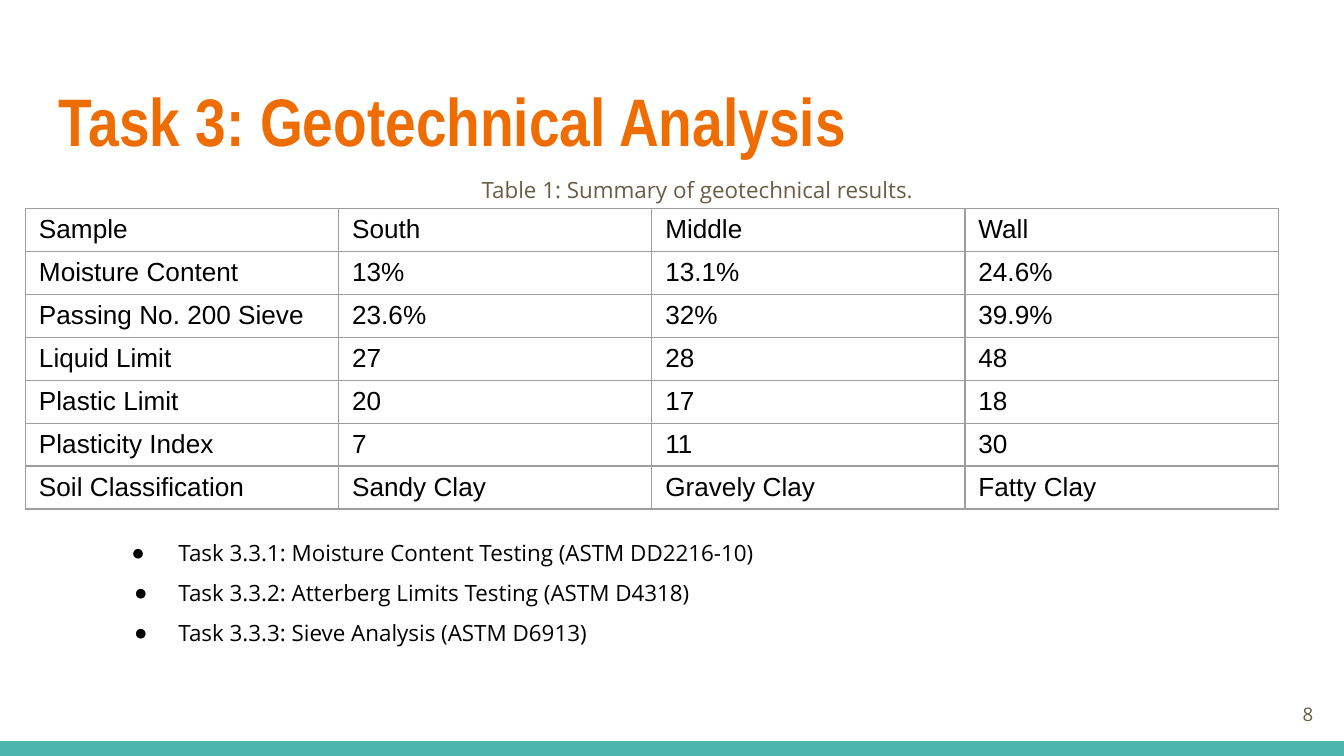
import pptx
import pptx.util
import pptx.dml.color
import pptx.enum.shapes
import pptx.enum.text
import pptx.oxml
import pptx.oxml.ns

Inches = pptx.util.Inches
Pt = pptx.util.Pt
RGBColor = pptx.dml.color.RGBColor
ALIGN = pptx.enum.text.PP_ALIGN
ANCHOR = pptx.enum.text.MSO_ANCHOR

WHITE = RGBColor(0xFF, 0xFF, 0xFF)
BLACK = RGBColor(0x00, 0x00, 0x00)
ORANGE = RGBColor(0xEF, 0x6C, 0x00)
BROWN = RGBColor(0x69, 0x5D, 0x46)
TEAL = RGBColor(0x4D, 0xB6, 0xAC)
GREY = RGBColor(0x9E, 0x9E, 0x9E)

TITLE = {"name": "Arial Narrow", "size": Pt(36), "bold": True, "color": ORANGE}
CAPTION = {"name": "Open Sans", "size": Pt(12), "color": BROWN}
TASK = {"name": "Open Sans", "size": Pt(12), "color": BLACK}
NUMBER = {"name": "Open Sans", "size": Pt(10), "color": BROWN}
CELL = {"name": "Arial", "size": Pt(14), "color": BLACK}
CELL_LAYOUT = {
    "margin_left": Inches(0.1),
    "margin_right": Inches(0.1),
    "margin_top": Inches(0.04),
    "margin_bottom": Inches(0.04),
    "vertical_anchor": ANCHOR.MIDDLE,
}

RESULTS = [
    ("Sample", "South", "Middle", "Wall"),
    ("Moisture Content", "13%", "13.1%", "24.6%"),
    ("Passing No. 200 Sieve", "23.6%", "32%", "39.9%"),
    ("Liquid Limit", "27", "28", "48"),
    ("Plastic Limit", "20", "17", "18"),
    ("Plasticity Index", "7", "11", "30"),
    ("Soil Classification", "Sandy Clay", "Gravely Clay", "Fatty Clay"),
]
TASKS = [
    ("Task 3.3.1: Moisture Content Testing (ASTM DD2216-10)", 0.35),
    ("Task 3.3.2: Atterberg Limits Testing (ASTM D4318)", 0.33),
    ("Task 3.3.3: Sieve Analysis (ASTM D6913)", 0.33),
]


def write(para, text, style):
    span = para.add_run()
    span.text = text
    for key, value in style.items():
        if key == "color":
            span.font.color.rgb = value
        else:
            setattr(span.font, key, value)


def add_frame(page, box, anchor=ANCHOR.TOP):
    frame = page.shapes.add_textbox(*map(Inches, box)).text_frame
    frame.word_wrap = True
    frame.vertical_anchor = anchor
    for side in ("left", "right", "top", "bottom"):
        setattr(frame, f"margin_{side}", Inches(0.1))
    return frame


def add_line(page, box, text, style, align=ALIGN.LEFT, spacing=1.0, anchor=ANCHOR.TOP):
    para = add_frame(page, box, anchor).paragraphs[0]
    para.alignment = align
    para.line_spacing = spacing
    write(para, text, style)


def add_footer_bar(page, box):
    bar = page.shapes.add_shape(pptx.enum.shapes.MSO_SHAPE.RECTANGLE, *map(Inches, box))
    bar.shadow.inherit = False
    bar.fill.solid()
    bar.fill.fore_color.rgb = TEAL
    bar.line.fill.background()


def add_bullet(para, hanging):
    properties = para._p.get_or_add_pPr()
    properties.set("marL", str(Inches(0.5)))
    properties.set("indent", str(-Inches(hanging)))
    namespace = pptx.oxml.ns.nsdecls("a")
    for markup in (
        f'<a:buClr {namespace}><a:srgbClr val="{BLACK}"/></a:buClr>',
        f'<a:buFont {namespace} typeface="Arial"/>',
        f'<a:buChar {namespace} char="●"/>',
    ):
        properties.append(pptx.oxml.parse_xml(markup))


def add_task_list(page, box):
    frame = add_frame(page, box)
    for index, (text, hanging) in enumerate(TASKS):
        para = frame.add_paragraph() if index else frame.paragraphs[0]
        add_bullet(para, hanging)
        para.line_spacing = 1.5
        write(para, text, TASK)


def add_borders(cell):
    properties = cell._tc.get_or_add_tcPr()
    namespace = pptx.oxml.ns.nsdecls("a")
    for index, side in enumerate(("lnL", "lnR", "lnT", "lnB")):
        properties.insert(index, pptx.oxml.parse_xml(
            f'<a:{side} {namespace} w="{Pt(0.75)}"><a:solidFill>'
            f'<a:srgbClr val="{GREY}"/></a:solidFill></a:{side}>'))


def add_results_table(page, box):
    rows, columns = len(RESULTS), len(RESULTS[0])
    table = page.shapes.add_table(rows, columns, *map(Inches, box)).table
    table.first_row = False
    table.horz_banding = False
    for column in table.columns:
        column.width = Inches(box[2] / columns)
    for row, values in zip(table.rows, RESULTS):
        row.height = Inches(box[3] / rows)
        for cell, value in zip(row.cells, values):
            for key, setting in CELL_LAYOUT.items():
                setattr(cell, key, setting)
            cell.fill.background()
            add_borders(cell)
            write(cell.text_frame.paragraphs[0], value, CELL)


def build_results_page(page, width, height):
    page.background.fill.solid()
    page.background.fill.fore_color.rgb = WHITE
    add_footer_bar(page, (0, height - 0.11, width, 0.11))
    add_line(page, (0.34, 0.49, 9.32, 0.77), "Task 3: Geotechnical Analysis", TITLE)
    add_line(page, (2.75, 1.18, 4.88, 0.37), "Table 1: Summary of geotechnical results.",
             CAPTION, ALIGN.CENTER, 1.15)
    add_task_list(page, (0.73, 3.81, 8.67, 1.5))
    add_line(page, (9.27, 5.1, 0.6, 0.43), "8", NUMBER, ALIGN.RIGHT, anchor=ANCHOR.MIDDLE)
    add_results_table(page, (0.19, 1.55, 9.32, 2.24))


def main():
    width = 10
    height = width * 9 / 16
    deck = pptx.Presentation()
    deck.slide_width = Inches(width)
    deck.slide_height = Inches(height)
    page = deck.slides.add_slide(deck.slide_layouts[6])
    build_results_page(page, width, height)
    deck.save("out.pptx")


if __name__ == "__main__":
    main()
